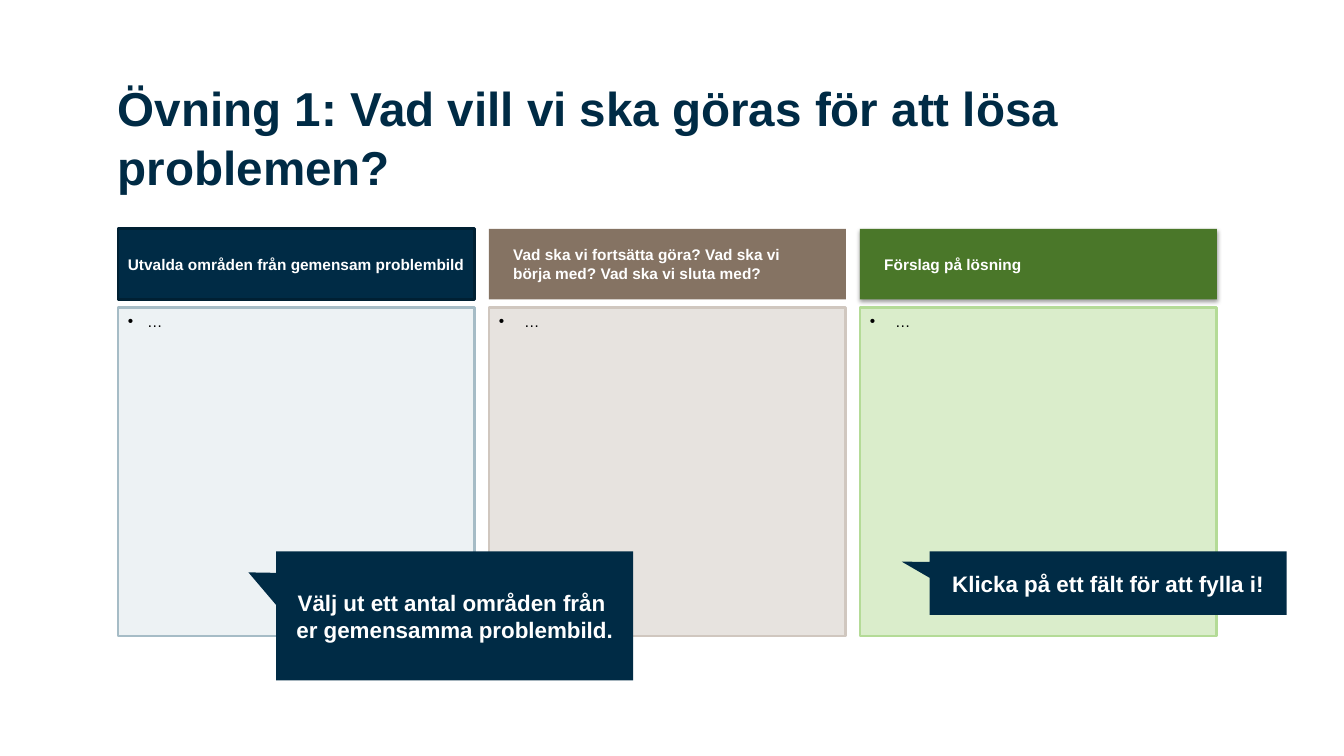
from lxml import etree
from pptx import Presentation
from pptx.dml.color import RGBColor
from pptx.enum.shapes import MSO_SHAPE
from pptx.enum.text import MSO_ANCHOR, MSO_AUTO_SIZE, PP_ALIGN
from pptx.oxml.ns import qn
from pptx.util import Inches, Pt

RECT = MSO_SHAPE.RECTANGLE
WEDGE = MSO_SHAPE.RECTANGULAR_CALLOUT
TOP, MIDDLE = MSO_ANCHOR.TOP, MSO_ANCHOR.MIDDLE
LEFT, CENTER = PP_ALIGN.LEFT, PP_ALIGN.CENTER
FIXED = MSO_AUTO_SIZE.NONE

NAVY, WHITE, BLACK = "002B45", "FFFFFF", "000000"
EDGE, STEP, WIDE = 1.17, 3.68, 3.54
HEAD_TOP, HEAD_TALL = 2.27, 0.7
BODY_TOP, BODY_TALL = 3.05, 3.26
NOTE_TOP = 5.47


def color(code):
    return RGBColor.from_string(code)


class Board:
    face = "Arial"

    def __init__(self, deck):
        self.slide = deck.slides.add_slide(deck.slide_layouts[5])

    def label(self, shape, text, size, tone, bold, align, anchor, side, rim):
        frame = shape.text_frame
        frame.word_wrap = True
        frame.auto_size = FIXED
        frame.vertical_anchor = anchor
        frame.margin_left = frame.margin_right = Inches(side)
        frame.margin_top = frame.margin_bottom = Inches(rim)
        frame.text = text
        line = frame.paragraphs[0]
        line.alignment = align
        for run in line.runs:
            run.font.name = self.face
            run.font.size = Pt(size)
            run.font.bold = bold
            run.font.color.rgb = color(tone)
        return line

    def title(self, text):
        shape = self.slide.shapes.title
        shape.left, shape.top = Inches(EDGE), Inches(0.75)
        shape.width, shape.height = Inches(11.29), Inches(1.42)
        line = self.label(shape, text, 34, NAVY, True, LEFT, TOP, 0, 0)
        line.line_spacing = 1.05

    def box(self, kind, left, top, tall, fill, edge=None):
        shape = self.slide.shapes.add_shape(
            kind, Inches(left), Inches(top), Inches(WIDE), Inches(tall))
        shape.shadow.inherit = False
        shape.fill.solid()
        shape.fill.fore_color.rgb = color(fill)
        if edge:
            shape.line.color.rgb = color(edge)
            shape.line.width = Pt(2)
        else:
            shape.line.fill.background()
        return shape

    def head(self, col, text, fill, edge, side):
        shape = self.box(RECT, EDGE + col * STEP, HEAD_TOP, HEAD_TALL, fill, edge)
        self.label(shape, text, 11, WHITE, True, LEFT, MIDDLE, side, 0.05)
        return shape

    def body(self, col, fill, edge, dent):
        shape = self.box(RECT, EDGE + col * STEP, BODY_TOP, BODY_TALL, fill, edge)
        line = self.label(shape, "…", 11, BLACK, False, LEFT, TOP, 0.1, 0.05)
        props = line._p.get_or_add_pPr()
        props.set("marL", str(Inches(dent)))
        props.set("indent", str(-Inches(dent)))
        etree.SubElement(props, qn("a:buFont"), typeface=self.face)
        etree.SubElement(props, qn("a:buChar"), char="•")

    def shade(self, shape):
        effects = shape._element.spPr.find(qn("a:effectLst"))
        outer = etree.SubElement(
            effects, qn("a:outerShdw"), blurRad=str(Pt(3.1)),
            dist=str(Pt(1.6)), dir="5400000", rotWithShape="0")
        tone = etree.SubElement(outer, qn("a:srgbClr"), val=BLACK)
        etree.SubElement(tone, qn("a:alpha"), val="38000")

    def note(self, left, tall, text):
        shape = self.box(WEDGE, left, NOTE_TOP, tall, NAVY)
        shape.adjustments[0] = -0.578
        shape.adjustments[1] = -0.337
        self.label(shape, text, 16, WHITE, True, CENTER, MIDDLE, 0.1, 0.05)


def main():
    deck = Presentation()
    deck.slide_width, deck.slide_height = Inches(13.33), Inches(7.5)
    board = Board(deck)
    board.title("Övning 1: Vad vill vi ska göras för att lösa problemen?")
    columns = [
        ("Utvalda områden från gemensam problembild",
         NAVY, "002033", 0.1, "EDF2F4", "A6BCC6", 0.19),
        ("Vad ska vi fortsätta göra? Vad ska vi börja med? Vad ska vi sluta med?",
         "857363", None, 0.24, "E7E3DF", "D0C7BF", 0.25),
        ("Förslag på lösning",
         "4A7729", None, 0.24, "DAEDCB", "B4DB97", 0.25),
    ]
    for col, (text, fill, edge, side, pale, rim, dent) in enumerate(columns):
        head = board.head(col, text, fill, edge, side)
        board.body(col, pale, rim, dent)
    board.shade(head)
    board.note(2.74, 1.28, "Välj ut ett antal områden från \ver gemensamma problembild.")
    board.note(9.22, 0.63, "Klicka på ett fält för att fylla i!")
    deck.save("out.pptx")


if __name__ == "__main__":
    main()
